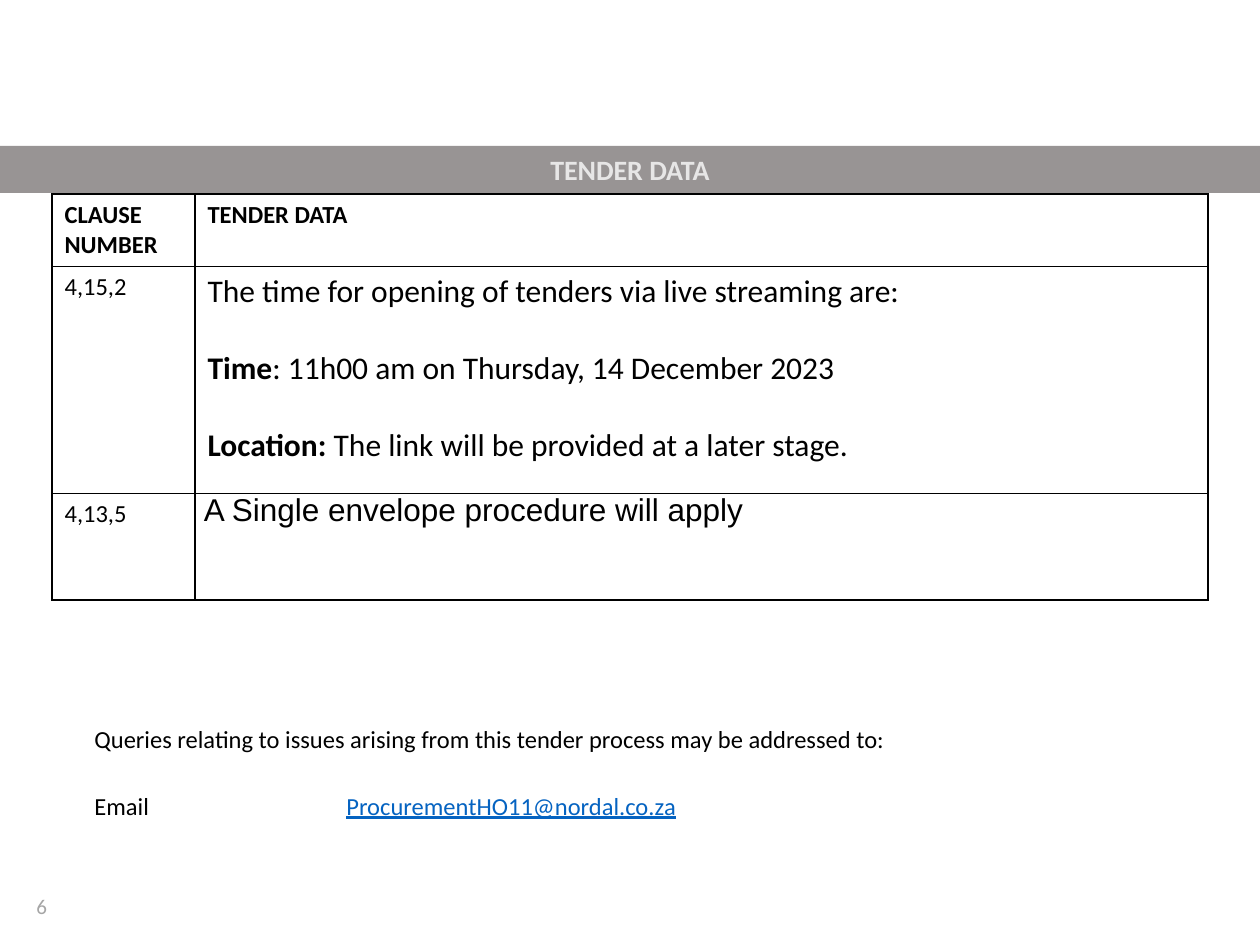
from lxml import etree
from pptx import Presentation
from pptx.dml.color import RGBColor
from pptx.enum.text import MSO_ANCHOR, MSO_AUTO_SIZE, PP_ALIGN
from pptx.oxml.ns import qn
from pptx.util import Emu, Pt

LEFT, CENTER, JUST = PP_ALIGN.LEFT, PP_ALIGN.CENTER, PP_ALIGN.JUSTIFY
TOP, MIDDLE = MSO_ANCHOR.TOP, MSO_ANCHOR.MIDDLE
NO_FIT = MSO_AUTO_SIZE.NONE
BLACK, LINK = "000000", "0563C1"


def px(n):
    return Emu(round(n * 914400 / 126))


def color(code):
    return RGBColor.from_string(code)


def add_tab(para, stop):
    tabs = etree.SubElement(para._p.get_or_add_pPr(), qn("a:tabLst"))
    etree.SubElement(tabs, qn("a:tab"), pos=str(px(stop)), algn="l")


def write(frame, paras, size=14, font="Calibri", ink=BLACK, bold=False,
          align=LEFT, gap=0, lead=None, tab=None):
    """Each paragraph is a list of (text, format changes) runs."""
    frame.word_wrap = True
    for i, runs in enumerate(paras):
        para = frame.add_paragraph() if i else frame.paragraphs[0]
        para.alignment = align
        if tab:
            add_tab(para, tab)
        if i and gap:
            para.space_before = Pt(gap)
        if lead:
            para.line_spacing = lead
        for text, look in runs:
            run = para.add_run()
            run.text = text
            run.font.name = font
            run.font.size = Pt(size)
            run.font.bold = look.get("bold", bold)
            run.font.underline = look.get("under", False)
            run.font.color.rgb = color(look.get("ink", ink))


def add_text(slide, box, paras, **look):
    shape = slide.shapes.add_textbox(*map(px, box))
    write(shape.text_frame, paras, **look)


def add_title(slide, box, text):
    title = slide.shapes.title
    title.left, title.top, title.width, title.height = map(px, box)
    title.fill.solid()
    title.fill.fore_color.rgb = color("989494")
    frame = title.text_frame
    frame.auto_size = NO_FIT
    frame.vertical_anchor = MIDDLE
    write(frame, [[(text, {})]], size=16, ink="E7E6E6", bold=True, align=CENTER)


def add_edges(cell):
    props = cell._tc.get_or_add_tcPr()
    for i, side in enumerate(("lnL", "lnR", "lnT", "lnB")):
        line = etree.Element(qn("a:" + side), w=str(Pt(1)))
        fill = etree.SubElement(line, qn("a:solidFill"))
        etree.SubElement(fill, qn("a:srgbClr"), val=BLACK)
        props.insert(i, line)


def add_grid(slide, left, top, cols, rows, cells):
    table = slide.shapes.add_table(
        len(rows), len(cols), px(left), px(top),
        px(sum(cols)), px(sum(rows))).table
    table.first_row = table.horz_banding = False
    for col, width in zip(table.columns, cols):
        col.width = px(width)
    for row, height in zip(table.rows, rows):
        row.height = px(height)
    for r, line in enumerate(cells):
        for c, (paras, look) in enumerate(line):
            cell = table.cell(r, c)
            cell.fill.background()
            cell.vertical_anchor = TOP
            add_edges(cell)
            write(cell.text_frame, paras, **look)
    return table


def main():
    deck = Presentation()
    deck.slide_width, deck.slide_height = px(1260), px(945)
    slide = deck.slides.add_slide(deck.slide_layouts[5])

    # Title band
    add_title(slide, (0, 146, 1260, 47), "TENDER DATA")

    # Tender clauses
    head, bold = {"bold": True}, {"bold": True}
    opening = [
        [("The time for opening of tenders via live streaming are:", {})],
        [("Time", bold), (": 11h00 am on Thursday, 14 December 2023", {})],
        [("Location: ", bold),
         ("The link will be provided at a later stage.", {})],
    ]
    single = [[("A Single envelope procedure will apply", {})]]
    cells = [
        [([[("CLAUSE NUMBER", {})]], head), ([[("TENDER DATA", {})]], head)],
        [([[("4,15,2", {})]], {}), (opening, {"size": 18, "gap": 22})],
        [([[("4,13,5", {})]], {}),
         (single, {"size": 18, "font": "Arial", "align": JUST})],
    ]
    table = add_grid(slide, 52, 194, (143, 1013), (72, 227, 107), cells)
    last = table.cell(2, 1)
    last.margin_left = last.margin_right = px(9)
    last.margin_top = last.margin_bottom = 0

    # Contact for queries
    queries = [
        [("Queries relating to issues arising from this tender process "
          "may be addressed to:", {})],
        [("Email\t", {}),
         ("ProcurementHO11@nordal.co.za", {"ink": LINK, "under": True})],
    ]
    add_text(slide, (82, 713, 1065, 113), queries,
             align=JUST, gap=19, lead=1.15, tab=252)

    # Page number
    add_text(slide, (24, 887, 284, 50), [[("6", {})]], size=12, ink="A6A6A6")

    deck.save("out.pptx")


if __name__ == "__main__":
    main()
